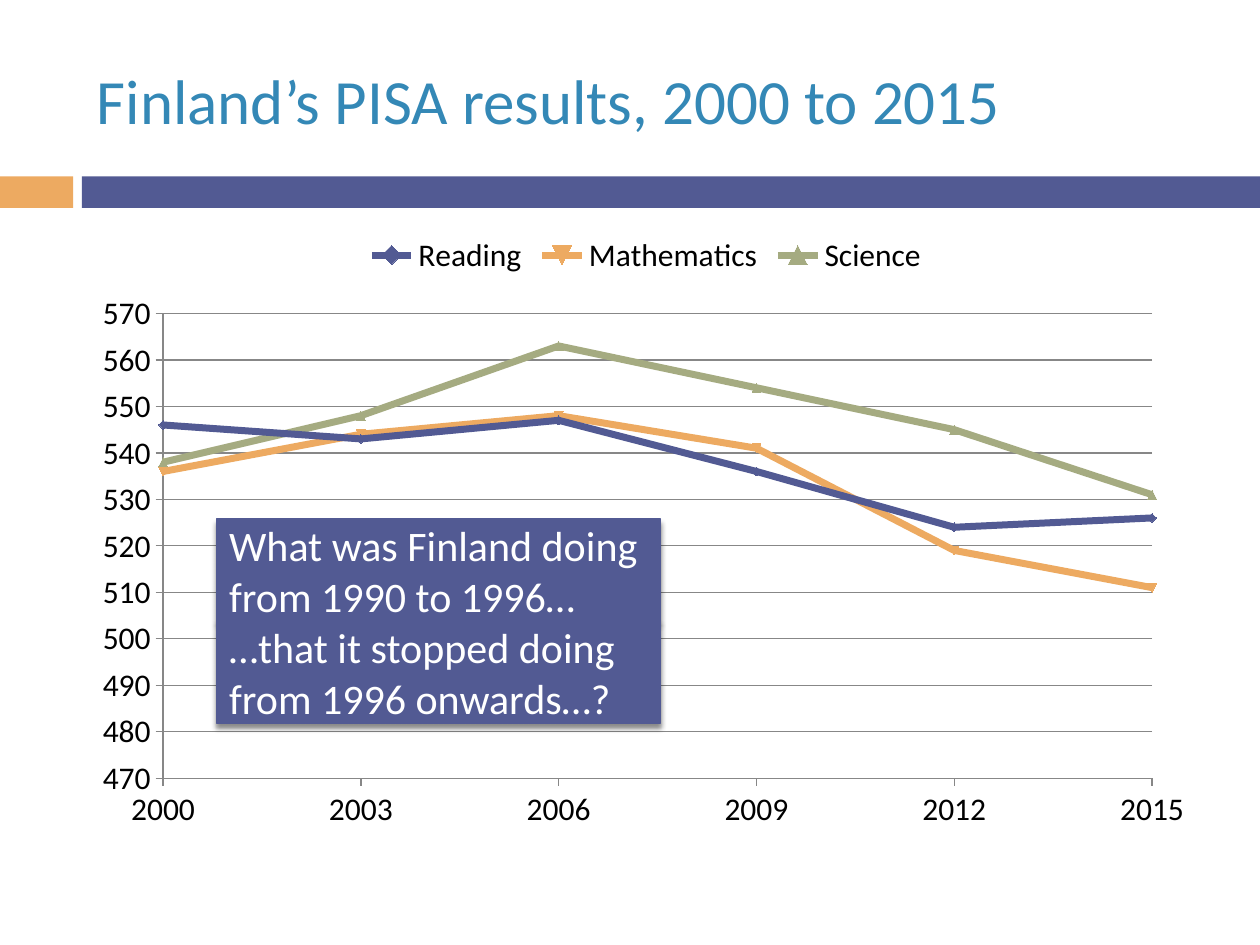
import pptx
import pptx.chart.data
import pptx.dml.color
import pptx.enum.chart
import pptx.enum.shapes
import pptx.enum.text
import pptx.oxml
import pptx.oxml.ns
import pptx.util
from pptx.util import Inches

FONT = "Calibri"
ORANGE = pptx.dml.color.RGBColor(0xED, 0xAA, 0x61)
INDIGO = pptx.dml.color.RGBColor(0x52, 0x5A, 0x93)
SAGE = pptx.dml.color.RGBColor(0xA5, 0xAB, 0x81)
TITLE_BLUE = pptx.dml.color.RGBColor(0x34, 0x88, 0xB6)
GREY = pptx.dml.color.RGBColor(0x87, 0x87, 0x87)
BLACK = pptx.dml.color.RGBColor(0, 0, 0)
WHITE = pptx.dml.color.RGBColor(0xFF, 0xFF, 0xFF)

YEARS = range(2000, 2016, 3)
SCORES = {
    "Reading": ([546, 543, 547, 536, 524, 526], INDIGO),
    "Mathematics": ([536, 544, 548, 541, 519, 511], ORANGE),
    "Science": ([538, 548, 563, 554, 545, 531], SAGE),
}

SOFT_SHADOW = (
    f'<a:effectLst {pptx.oxml.ns.nsdecls("a")}>'
    '<a:outerShdw blurRad="38100" dist="30480" dir="5400000" rotWithShape="0">'
    '<a:srgbClr val="000000"><a:alpha val="45000"/></a:srgbClr>'
    '</a:outerShdw></a:effectLst>'
)
PLOT_LAYOUT = (
    f'<c:layout {pptx.oxml.ns.nsdecls("c")}><c:manualLayout>'
    '<c:layoutTarget val="inner"/><c:xMode val="edge"/><c:yMode val="edge"/>'
    '<c:x val="0.07"/><c:y val="0.15"/><c:w val="0.88"/><c:h val="0.75"/>'
    '</c:manualLayout></c:layout>'
)


def write_text(shape, text, size, color):
    frame = shape.text_frame
    frame.word_wrap = True
    frame.vertical_anchor = pptx.enum.text.MSO_ANCHOR.MIDDLE
    frame.text = text
    paragraph = frame.paragraphs[0]
    paragraph.alignment = pptx.enum.text.PP_ALIGN.LEFT
    font = paragraph.runs[0].font
    font.name = FONT
    font.size = pptx.util.Pt(size)
    font.color.rgb = color


def add_bar(slide, left, top, width, height, color):
    bar = slide.shapes.add_shape(
        pptx.enum.shapes.MSO_SHAPE.RECTANGLE,
        Inches(left), Inches(top), Inches(width), Inches(height))
    bar.shadow.inherit = False
    bar.fill.solid()
    bar.fill.fore_color.rgb = color
    bar.line.fill.background()
    return bar


def add_question(slide, top, text):
    question = add_bar(slide, 1.72, top, 3.52, 0.81, INDIGO)
    question.line.color.rgb = INDIGO
    question.line.width = pptx.util.Pt(0.79)
    properties = question.fill._xPr
    properties.remove(properties.find(pptx.oxml.ns.qn("a:effectLst")))
    properties.append(pptx.oxml.parse_xml(SOFT_SHADOW))
    write_text(question, text, 24, WHITE)


def add_title(slide, text):
    title = slide.shapes.add_textbox(
        Inches(0.67), Inches(0.25), Inches(8.92), Inches(1.08))
    write_text(title, text, 36, TITLE_BLUE)


def format_axis(axis, low, high, step, gridlines):
    axis.minimum_scale, axis.maximum_scale = low, high
    axis.major_unit = step
    axis.has_major_gridlines = gridlines
    axis.major_tick_mark = pptx.enum.chart.XL_TICK_MARK.OUTSIDE
    axis.minor_tick_mark = pptx.enum.chart.XL_TICK_MARK.NONE
    lines = [axis.format.line]
    if gridlines:
        lines.append(axis.major_gridlines.format.line)
    for line in lines:
        line.color.rgb = GREY
        line.width = pptx.util.Pt(0.75)


def format_series(series, color):
    series.smooth = False
    series.format.line.color.rgb = color
    series.format.line.width = pptx.util.Pt(4)
    marker = series.marker
    marker.style = pptx.enum.chart.XL_MARKER_STYLE.AUTOMATIC
    marker.size = 5
    marker.format.fill.solid()
    marker.format.fill.fore_color.rgb = color
    marker.format.line.color.rgb = color


def add_score_chart(slide):
    data = pptx.chart.data.XyChartData()
    for subject, (scores, _) in SCORES.items():
        points = data.add_series(subject)
        for year, score in zip(YEARS, scores):
            points.add_data_point(year, score)
    chart = slide.shapes.add_chart(
        pptx.enum.chart.XL_CHART_TYPE.XY_SCATTER_LINES,
        Inches(0.67), Inches(1.75), Inches(8.92), Inches(4.92), data).chart
    chart.has_title = False
    chart.font.name = FONT
    chart.font.size = pptx.util.Pt(18)
    chart.font.color.rgb = BLACK
    chart.has_legend = True
    chart.legend.position = pptx.enum.chart.XL_LEGEND_POSITION.TOP
    chart.legend.include_in_layout = False

    plot = chart.plots[0]
    plot.vary_by_categories = False
    for series, (_, color) in zip(plot.series, SCORES.values()):
        format_series(series, color)
    format_axis(chart.category_axis, 2000, 2015, 3, False)
    format_axis(chart.value_axis, 470, 570, 10, True)

    # Fixed plot area inside the chart frame
    plot_area = chart.element.find(".//" + pptx.oxml.ns.qn("c:plotArea"))
    for layout in plot_area.findall(pptx.oxml.ns.qn("c:layout")):
        plot_area.remove(layout)
    plot_area.insert(0, pptx.oxml.parse_xml(PLOT_LAYOUT))


def main():
    deck = pptx.Presentation()
    deck.slide_width, deck.slide_height = Inches(10), Inches(7.5)
    slide = deck.slides.add_slide(deck.slide_layouts[6])

    # Header band and title
    add_bar(slide, 0, 1.4, 0.58, 0.25, ORANGE)
    add_bar(slide, 0.65, 1.4, 9.35, 0.25, INDIGO)
    add_title(slide, "Finland’s PISA results, 2000 to 2015")

    # Scores by year
    add_score_chart(slide)

    # Questions over the chart
    add_question(slide, 4.12, "What was Finland doing from 1990 to 1996…")
    add_question(slide, 4.93, "…that it stopped doing from 1996 onwards…?")

    deck.save("out.pptx")


if __name__ == "__main__":
    main()
